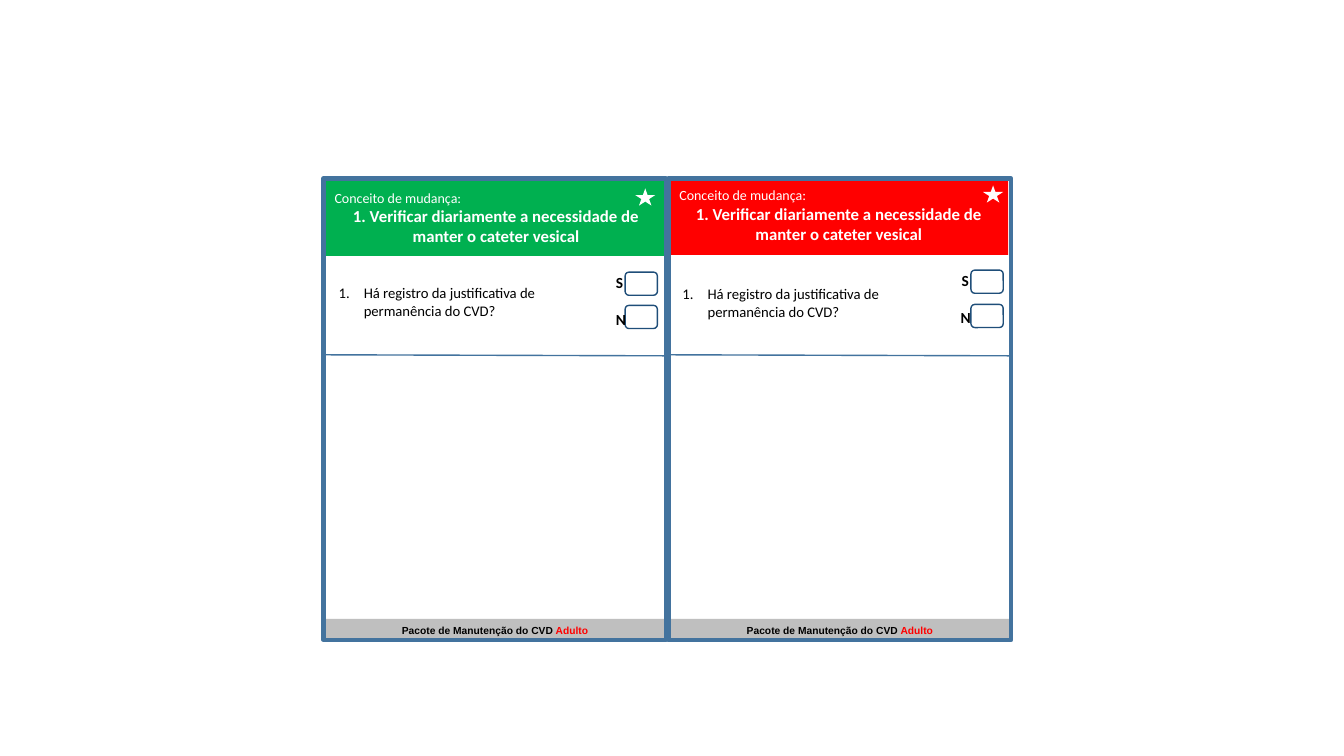
"""Build a slide with two audit cards, green and red, for daily catheter review."""
from lxml.etree import SubElement
from pptx import Presentation
from pptx.dml.color import RGBColor
from pptx.enum.shapes import MSO_CONNECTOR as Line, MSO_SHAPE as Shape
from pptx.enum.text import MSO_ANCHOR as Anchor, PP_ALIGN as Align
from pptx.oxml.ns import qn
from pptx.util import Pt

PX = 9144
BLUE = "43739E"
WHITE = "FFFFFF"
BLACK = "000000"


def add_box(kind, x, y, w, h, fill=None, line=None, width=1):
    box = slide.shapes.add_shape(kind, x * PX, y * PX, w * PX, h * PX)
    box.shadow.inherit = False
    if fill:
        box.fill.solid()
        box.fill.fore_color.rgb = RGBColor.from_string(fill)
    else:
        box.fill.background()
    if line:
        box.line.color.rgb = RGBColor.from_string(line)
        box.line.width = Pt(width)
    else:
        box.line.fill.background()
    box.text_frame.word_wrap = True
    box.text_frame.vertical_anchor = Anchor.MIDDLE
    return box


def add_run(paragraph, text, size, color, bold=False, font="Calibri", align=Align.LEFT):
    paragraph.alignment = align
    run = paragraph.add_run()
    run.text = text
    run.font.name = font
    run.font.size = Pt(size)
    run.font.bold = bold
    run.font.color.rgb = RGBColor.from_string(color)


deck = Presentation()
deck.slide_width, deck.slide_height = 1333 * PX, 750 * PX
slide = deck.slides.add_slide(deck.slide_layouts[6])

cards = [
    dict(left=321, color="00B050", head=(178, 340, 5), question=(326, 274), star=(630, 187),
         check_left=620, answers=[("S", 601, 270, 273), ("N", 601, 303, 309)]),
    dict(left=663, color="FF0000", head=(177, 336, 8), question=(667, 275), star=(975, 184),
         check_left=963, answers=[("S", 944, 268, 271), ("N", 943, 302, 307)]),
]

for card in cards:
    left = card["left"]

    footer = add_box(Shape.RECTANGLE, left, 614, 340, 22, "BFBFBF").text_frame
    footer.vertical_anchor = Anchor.TOP
    for text, color in [("Pacote de Manutenção do CVD ", BLACK), ("Adulto", "FF0000")]:
        add_run(footer.paragraphs[0], text, 7.3, color, True, "Arial", Align.CENTER)

    head_top, head_width, head_inset = card["head"]
    heading = add_box(Shape.RECTANGLE, left + 1, head_top, head_width, 76, card["color"]).text_frame
    heading.margin_bottom = head_inset * PX
    add_run(heading.paragraphs[0], "Conceito de mudança:", 10, WHITE)
    add_run(heading.add_paragraph(),
            "1. Verificar diariamente a necessidade de manter o cateter vesical",
            12, WHITE, True, align=Align.CENTER)

    question = add_box(Shape.RECTANGLE, *card["question"], 280, 51).text_frame.paragraphs[0]
    add_run(question, "Há registro da justificativa de  permanência do CVD?", 10.5, BLACK)
    numbering = question._p.get_or_add_pPr()
    numbering.set("marL", str(25 * PX))
    numbering.set("indent", str(-25 * PX))
    SubElement(numbering, qn("a:buAutoNum"), type="arabicPeriod")

    add_box(Shape.RECTANGLE, left, 177, 340, 458, line=BLUE, width=3)
    divider = slide.shapes.add_connector(
        Line.STRAIGHT, left * PX, 352 * PX, (left + 339) * PX, 353 * PX)
    divider.line.color.rgb = RGBColor.from_string(BLUE)
    divider.line.width = Pt(1)
    SubElement(divider._element.spPr, qn("a:effectLst"))

    add_box(Shape.STAR_5_POINT, *card["star"], 20, 17, WHITE)

    for letter, letter_left, check_top, letter_top in card["answers"]:
        add_box(Shape.ROUNDED_RECTANGLE, card["check_left"], check_top, 32, 23, line="1F4E79")
        answer = add_box(Shape.RECTANGLE, letter_left, letter_top, 24, 15).text_frame
        add_run(answer.paragraphs[0], letter, 11, BLACK, True, align=Align.CENTER)

deck.save("out.pptx")
